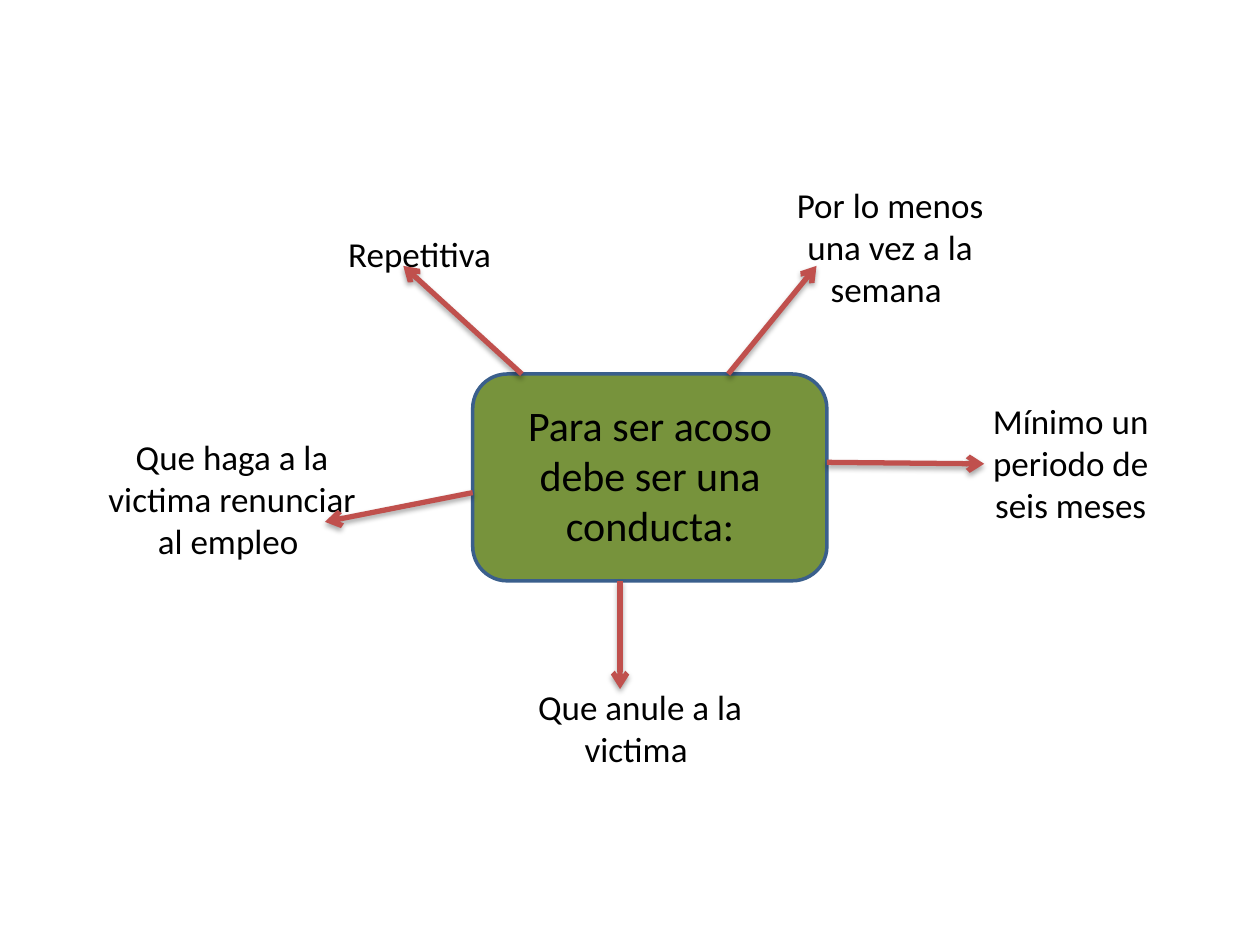
from lxml import etree
from pptx import Presentation
from pptx.dml.color import RGBColor
from pptx.enum.shapes import MSO_CONNECTOR as Connector, MSO_SHAPE as Shape
from pptx.enum.text import MSO_AUTO_SIZE as AutoSize, PP_ALIGN as Align
from pptx.oxml import parse_xml
from pptx.oxml.ns import nsdecls, qn
from pptx.util import Cm, Pt

COLORS = {"box": "77933C", "border": "3A5F8C", "arrow": "C0504D",
          "text": "000000", "shadow": "000000"}

# Central idea: left, top, width, height in cm
BOX_LEFT, BOX_TOP, BOX_WIDTH, BOX_HEIGHT = 9.53, 7.54, 7.14, 4.17
BOX_RIGHT, BOX_BOTTOM = BOX_LEFT + BOX_WIDTH, BOX_TOP + BOX_HEIGHT
IDEA = ("Para ser acoso debe ser una conducta:", (9.93, 7.92, 6.35, 3.33))

# Conditions: text, text area, arrow start on the box, arrow tip (cm)
CONDITIONS = [
    ("Repetitiva ", (6.15, 4.57, 4.78, 1.11),
     (10.52, BOX_TOP), (8.13, 5.36)),
    ("Por lo menos una vez a la semana ", (15.47, 3.58, 4.95, 2.82),
     (14.68, BOX_TOP), (16.46, 5.36)),
    ("Mínimo un periodo de seis meses", (19.3, 7.92, 4.57, 2.82),
     (BOX_RIGHT, 9.32), (19.84, 9.35)),
    ("Que anule a la victima ", (9.73, 13.69, 6.35, 1.96),
     (12.5, BOX_BOTTOM), (12.5, 13.89)),
    ("Que haga a la victima renunciar al empleo ", (1.9, 8.66, 5.56, 3.68),
     (BOX_LEFT, 9.93), (6.55, 10.52)),
]


def color(name):
    return RGBColor.from_string(COLORS[name])


def add_text(slide, text, area, size=20, font="Calibri", fill="text"):
    label = slide.shapes.add_textbox(*map(Cm, area))
    frame = label.text_frame
    frame.word_wrap = True
    frame.auto_size = AutoSize.SHAPE_TO_FIT_TEXT
    paragraph = frame.paragraphs[0]
    paragraph.alignment = Align.CENTER
    run = paragraph.add_run()
    run.text = text
    run.font.size = Pt(size)
    run.font.name = font
    run.font.color.rgb = color(fill)


def add_arrow(slide, start, tip):
    arrow = slide.shapes.add_connector(Connector.STRAIGHT, *map(Cm, start + tip))
    arrow.line.color.rgb = color("arrow")
    arrow.line.width = Pt(3)
    properties = arrow.line._get_or_add_ln()
    etree.SubElement(properties, qn("a:tailEnd"), type="arrow")
    # Soft shadow straight below the line
    arrow._element.spPr.append(parse_xml(
        f'<a:effectLst {nsdecls("a")}>'
        f'<a:outerShdw blurRad="{Pt(3.1)}" dist="{Pt(1.8)}" dir="5400000" rotWithShape="0">'
        f'<a:srgbClr val="{COLORS["shadow"]}"><a:alpha val="35000"/></a:srgbClr>'
        '</a:outerShdw></a:effectLst>'))


def main():
    prs = Presentation()
    prs.slide_width, prs.slide_height = Cm(25.4), Cm(19.05)
    slide = prs.slides.add_slide(prs.slide_layouts[6])

    # Central idea
    box = slide.shapes.add_shape(
        Shape.ROUNDED_RECTANGLE,
        *map(Cm, (BOX_LEFT, BOX_TOP, BOX_WIDTH, BOX_HEIGHT)))
    box.shadow.inherit = False
    box.fill.solid()
    box.fill.fore_color.rgb = color("box")
    box.line.color.rgb = color("border")
    box.line.width = Pt(2)
    add_text(slide, *IDEA, size=24)

    # Conditions around it, then the arrows on top
    for text, area, _, _ in CONDITIONS:
        add_text(slide, text, area)
    for _, _, start, tip in CONDITIONS:
        add_arrow(slide, start, tip)

    prs.save("out.pptx")


if __name__ == "__main__":
    main()
